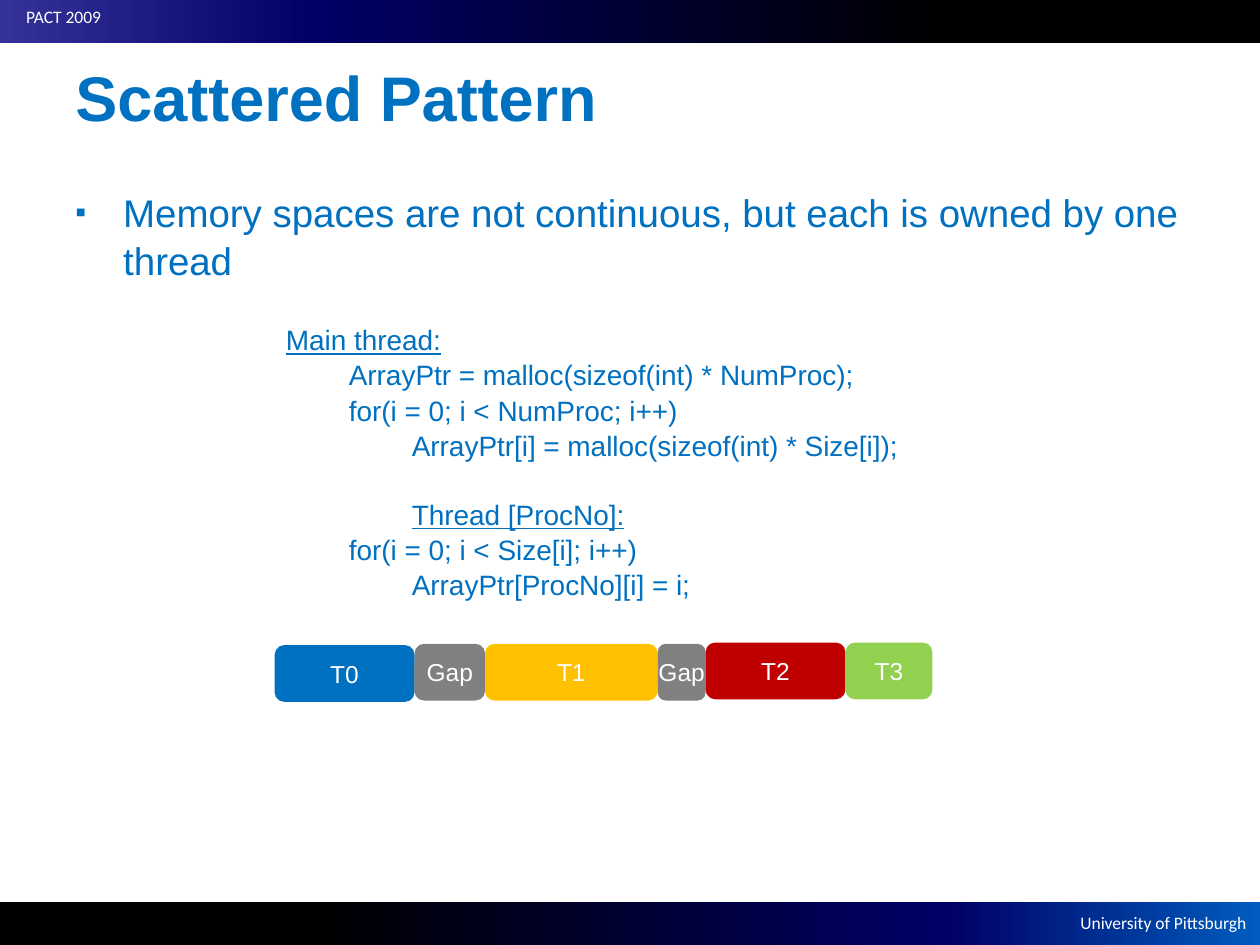
"""Build the Scattered Pattern slide: thread code and a memory layout strip."""
from pptx import Presentation, oxml, util as u
from pptx.dml.color import RGBColor
from pptx.enum import shapes, text
from pptx.oxml import ns

Inches, Pt = u.Inches, u.Pt
COLORS = {
    "blue": "0070C0", "gold": "FFC000", "red": "C00000", "green": "92D050",
    "gray": "808080", "white": "FFFFFF", "black": "000000",
    "navy": "000066", "indigo": "333399", "azure": "005CBF",
}


def add_text(box, words, size, color, name="Arial", first=False):
    frame = box.text_frame
    paragraph = frame.paragraphs[0] if first else frame.add_paragraph()
    paragraph.text = words
    paragraph.font.size = Pt(size)
    paragraph.font.name = name
    paragraph.font.color.rgb = RGBColor.from_string(COLORS[color])
    return paragraph


def add_box(left, top, width, height, wrap=True):
    box = slide.shapes.add_textbox(Inches(left), Inches(top), Inches(width), Inches(height))
    box.text_frame.word_wrap = wrap
    return box


presentation = Presentation()
presentation.slide_width, presentation.slide_height = Inches(10), Inches(7.5)
slide = presentation.slides.add_slide(presentation.slide_layouts[6])

bands = [
    (7.16, ["black", "black", "navy", "azure"], "University of Pittsburgh", (8.33, 7.19, 1.66, 0.27)),
    (0, ["indigo", "navy", "black", "black"], "PACT 2009", (0, 0, 0.9, 0.27)),
]
for top, stops, label, place in bands:
    band = slide.shapes.add_shape(
        shapes.MSO_SHAPE.RECTANGLE, 0, Inches(top), Inches(10), Inches(0.34))
    band.shadow.inherit = False
    band.line.fill.background()
    stop_xml = "".join(
        f'<a:gs pos="{position * 1000}"><a:srgbClr val="{COLORS[stop]}"/></a:gs>'
        for position, stop in zip((0, 25, 75, 100), stops))
    gradient = oxml.parse_xml(
        f'<a:gradFill {ns.nsdecls("a")}><a:gsLst>{stop_xml}</a:gsLst><a:lin ang="0"/></a:gradFill>')
    band.element.spPr.find(ns.qn("a:prstGeom")).addnext(gradient)
    paragraph = add_text(add_box(*place, wrap=False), label, 10, "white", "Calibri", first=True)
    paragraph.alignment = text.PP_ALIGN.RIGHT

title = add_box(0.5, 0.14, 9, 1.25)
title.text_frame.vertical_anchor = text.MSO_ANCHOR.MIDDLE
add_text(title, "Scattered Pattern", 36, "blue", first=True).font.bold = True

body = add_box(0.5, 1.43, 9, 5.4)
paragraph = body.text_frame.paragraphs[0]
properties = paragraph._p.get_or_add_pPr()
properties.set("marL", str(Inches(0.38)))
properties.set("indent", str(Inches(-0.38)))
for bullet in (f'<a:buClr {{}}><a:srgbClr val="{COLORS["blue"]}"/></a:buClr>',
               '<a:buSzPct {} val="80000"/>', '<a:buFont {} typeface="Arial"/>',
               '<a:buChar {} char="▪"/>'):
    properties.append(oxml.parse_xml(bullet.format(ns.nsdecls("a"))))
add_text(body, "Memory spaces are not continuous, but each is owned by one thread",
         22, "blue", first=True).line_spacing = 1.05

code = add_box(2.17, 2.5, 5.18, 2.26)
code_lines = [
    (0, "Main thread:"),
    (0.5, "ArrayPtr = malloc(sizeof(int) * NumProc);"),
    (0.5, "for(i = 0; i < NumProc; i++)"),
    (1, "ArrayPtr[i] = malloc(sizeof(int) * Size[i]);"),
    (1, "Thread [ProcNo]:"),
    (0.5, "for(i = 0; i < Size[i]; i++)"),
    (1, "ArrayPtr[ProcNo][i] = i;"),
]
for index, (indent, words) in enumerate(code_lines):
    paragraph = add_text(code, words, 16, "blue", first=index == 0)
    paragraph._p.get_or_add_pPr().set("marL", str(Inches(indent)))
    paragraph.line_spacing = 1.05
    paragraph.font.underline = words.endswith(":")
    if words.startswith("Thread"):
        paragraph.space_before = Pt(19.2)

memory = slide.shapes.add_group_shape()
left = 2.18
for label, color, top, width in [
    ("T0", "blue", 5.12, 1.11), ("Gap", "gray", 5.11, 0.56), ("T1", "gold", 5.11, 1.37),
    ("Gap", "gray", 5.11, 0.38), ("T2", "red", 5.1, 1.11), ("T3", "green", 5.1, 0.69),
]:
    block = memory.shapes.add_shape(
        shapes.MSO_SHAPE.ROUNDED_RECTANGLE, Inches(left), Inches(top), Inches(width), Inches(0.45))
    block.shadow.inherit = False
    block.fill.solid()
    block.fill.fore_color.rgb = RGBColor.from_string(COLORS[color])
    block.line.fill.background()
    frame = block.text_frame
    frame.margin_left = frame.margin_right = frame.margin_top = frame.margin_bottom = 0
    frame.word_wrap = False
    frame.vertical_anchor = text.MSO_ANCHOR.MIDDLE
    add_text(block, label, 14, "white", first=True).alignment = text.PP_ALIGN.CENTER
    left += width

presentation.save("out.pptx")
